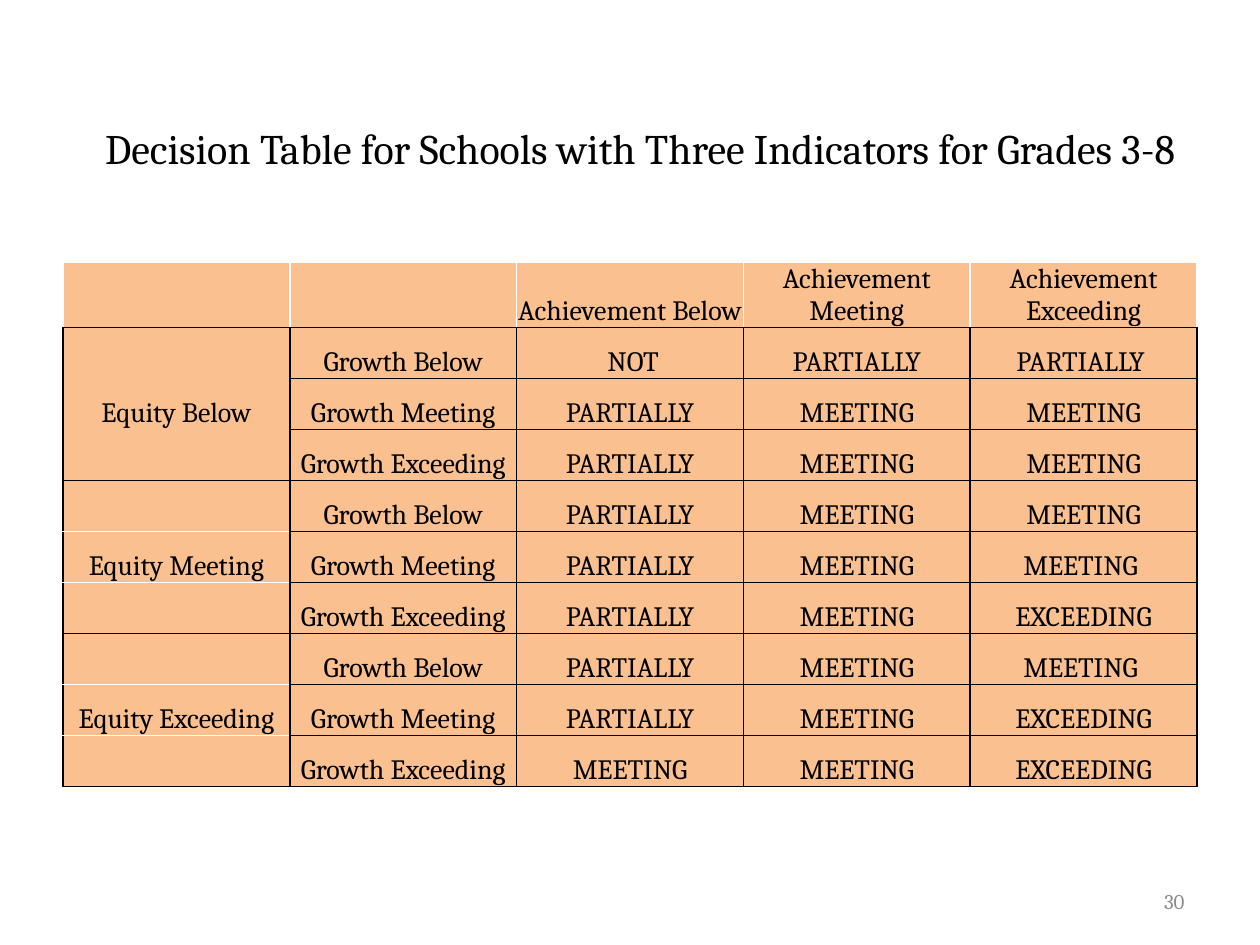
from lxml import etree
from pptx import Presentation
from pptx.dml.color import RGBColor
from pptx.enum.text import MSO_ANCHOR, PP_ALIGN
from pptx.oxml.ns import qn
from pptx.util import Inches, Pt

CENTER, RIGHT = PP_ALIGN.CENTER, PP_ALIGN.RIGHT
TOP, MIDDLE, BOTTOM = MSO_ANCHOR.TOP, MSO_ANCHOR.MIDDLE, MSO_ANCHOR.BOTTOM

TITLE = "Decision Table for Schools with Three Indicators for Grades 3-8"
PAGE_NUMBER = "30"
HEADER = ["", "", "Achievement Below", "Achievement Meeting", "Achievement Exceeding"]
GROWTH = ["Growth Below", "Growth Meeting", "Growth Exceeding"]
DECISIONS = {
    "Equity Below": [
        (" NOT", "PARTIALLY", "PARTIALLY "),
        ("PARTIALLY", "MEETING", " MEETING "),
        ("PARTIALLY", "MEETING", " MEETING "),
    ],
    "Equity Meeting": [
        ("PARTIALLY", "MEETING", " MEETING "),
        ("PARTIALLY", "MEETING", "MEETING "),
        ("PARTIALLY", "MEETING", "EXCEEDING"),
    ],
    "Equity Exceeding": [
        ("PARTIALLY", "MEETING", "MEETING "),
        ("PARTIALLY", "MEETING", "EXCEEDING"),
        ("MEETING", "MEETING", "EXCEEDING"),
    ],
}
COLORS = {"text": "000000", "number": "8C8C8C", "cell": "FAC090",
          "black": "000000", "white": "FFFFFF"}
FONT = "Cambria"
LEFT, TABLE_TOP, COLUMN_WIDTH, ROW_HEIGHT = 0.5, 2.08, 1.8, 0.405
CELL_FORMAT = {
    "margin_left": Inches(0.01), "margin_right": Inches(0.01),
    "margin_top": Inches(0.01), "margin_bottom": 0, "vertical_anchor": BOTTOM,
}


def write(frame, text, size, color, align):
    para = frame.paragraphs[0]
    para.alignment = align
    if text:
        span = para.add_run()
        span.text = text
        for name, value in {"name": FONT, "size": Pt(size), "bold": False}.items():
            setattr(span.font, name, value)
        span.font.color.rgb = RGBColor.from_string(COLORS[color])


def place(box, left, top, width, height):
    for name, value in {"left": left, "top": top, "width": width, "height": height}.items():
        setattr(box, name, Inches(value))


def edge_colors(row, column):
    edges = {"L": "black", "R": "black", "T": "black", "B": "black"}
    if row == 0:
        edges.update(L="white", R="white", T="white")
    elif column == 0:
        group, step = divmod(row - 1, len(GROWTH))
        inner = None if group == 0 else "white"
        if step > 0:
            edges["T"] = inner
        if step < len(GROWTH) - 1:
            edges["B"] = inner
    return edges


def draw_borders(cell, edges):
    properties = cell._tc.get_or_add_tcPr()
    for index, (side, color) in enumerate(edges.items()):
        line = etree.Element(qn(f"a:ln{side}"), w=str(Pt(1)))
        if color:
            fill = etree.SubElement(line, qn("a:solidFill"))
            etree.SubElement(fill, qn("a:srgbClr"), val=COLORS[color])
        else:
            etree.SubElement(line, qn("a:noFill"))
        properties.insert(index, line)


rows = [HEADER]
for equity, group in DECISIONS.items():
    for step, (growth, decisions) in enumerate(zip(GROWTH, group)):
        rows.append([equity if step == 1 else "", growth, *decisions])

deck = Presentation()
deck.slide_width, deck.slide_height = Inches(10), Inches(7.5)
page = deck.slides.add_slide(deck.slide_layouts[5])

title = page.shapes.title
place(title, 0.58, 0.92, 9, 1.25)
title.text_frame.word_wrap = True
title.text_frame.vertical_anchor = TOP
write(title.text_frame, TITLE, 24, "text", CENTER)

grid = page.shapes.add_table(
    len(rows), len(HEADER), Inches(LEFT), Inches(TABLE_TOP),
    Inches(COLUMN_WIDTH * len(HEADER)), Inches(ROW_HEIGHT * len(rows))).table
grid.first_row = grid.horz_banding = False
for column in grid.columns:
    column.width = Inches(COLUMN_WIDTH)
for row in grid.rows:
    row.height = Inches(ROW_HEIGHT)
for row_index, values in enumerate(rows):
    for column_index, value in enumerate(values):
        cell = grid.cell(row_index, column_index)
        for name, setting in CELL_FORMAT.items():
            setattr(cell, name, setting)
        cell.fill.solid()
        cell.fill.fore_color.rgb = RGBColor.from_string(COLORS["cell"])
        write(cell.text_frame, value, 16, "text", CENTER)
        draw_borders(cell, edge_colors(row_index, column_index))

number = page.shapes.add_textbox(0, 0, 0, 0)
place(number, 7.17, 6.95, 2.33, 0.4)
number.text_frame.word_wrap = True
number.text_frame.vertical_anchor = MIDDLE
write(number.text_frame, PAGE_NUMBER, 12, "number", RIGHT)

deck.save("out.pptx")
